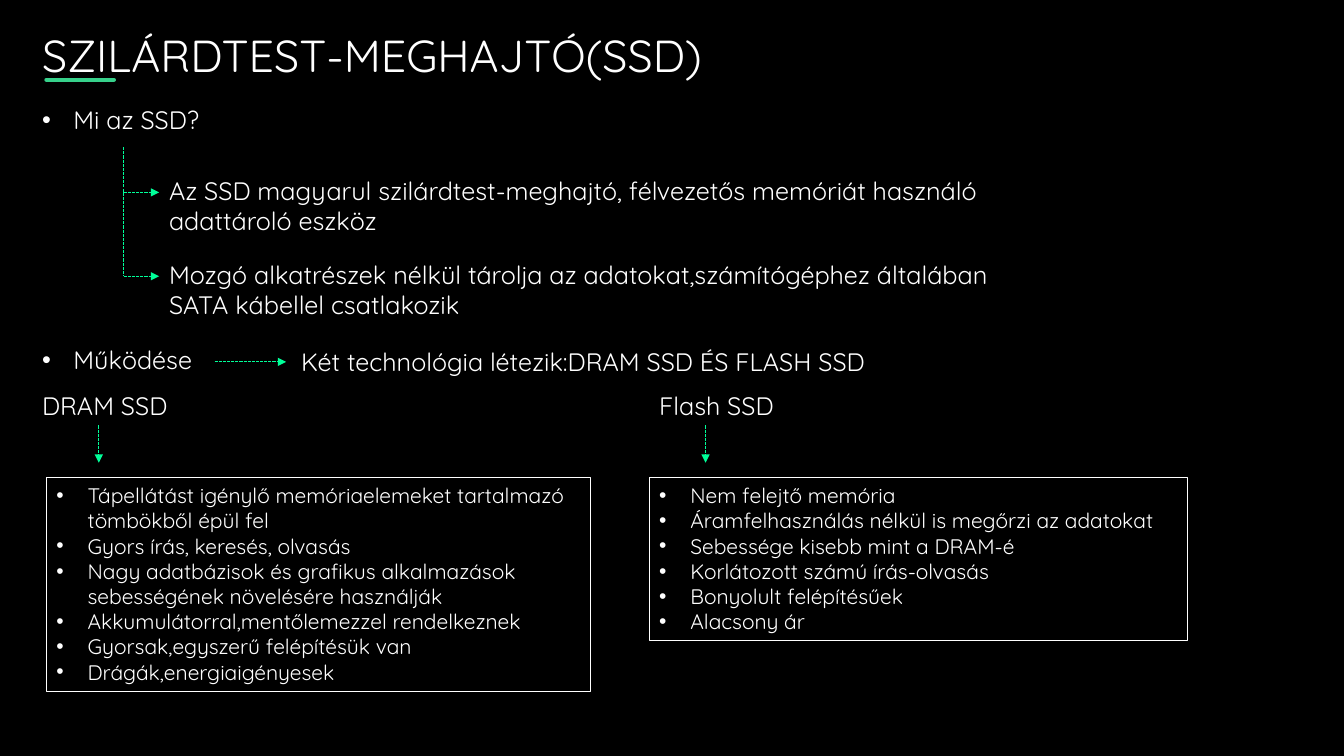
from lxml.etree import SubElement
from pptx import Presentation
from pptx.dml.color import RGBColor
from pptx.enum.dml import MSO_LINE_DASH_STYLE as Dash
from pptx.enum.shapes import MSO_CONNECTOR as Connector, MSO_SHAPE as Shape
from pptx.enum.text import MSO_ANCHOR as Anchor, MSO_AUTO_SIZE as AutoSize, PP_ALIGN as Align
from pptx.oxml.ns import qn
from pptx.util import Cm, Pt

BLACK = RGBColor(0x00, 0x00, 0x00)
WHITE = RGBColor(0xFF, 0xFF, 0xFF)
GREEN = RGBColor(0x37, 0xD1, 0x8B)
NEON = RGBColor(0x00, 0xFF, 0x99)
FONT = "Quicksand"
INDENT = Cm(0.79)
BRANCH_X, TEXT_X = 3.12, 4.01

ANSWERS = [
    (4.29, ["Az SSD magyarul szilárdtest-meghajtó, félvezetős memóriát használó adattároló eszköz"]),
    (6.4, ["Mozgó alkatrészek nélkül tárolja az adatokat,számítógéphez általában",
           "SATA kábellel csatlakozik"]),
]
DRAM_POINTS = [
    "Tápellátást igénylő memóriaelemeket tartalmazó tömbökből épül fel",
    "Gyors írás, keresés, olvasás",
    "Nagy adatbázisok és grafikus alkalmazások sebességének növelésére használják",
    "Akkumulátorral,mentőlemezzel rendelkeznek",
    "Gyorsak,egyszerű felépítésük van",
    "Drágák,energiaigényesek",
]
FLASH_POINTS = [
    "Nem felejtő memória",
    "Áramfelhasználás nélkül is megőrzi az adatokat",
    "Sebessége kisebb mint a DRAM-é",
    "Korlátozott számú írás-olvasás",
    "Bonyolult felépítésűek",
    "Alacsony ár",
]


def write_text(frame, lines, size=18, bullet=False, anchor=Anchor.TOP, auto_size=AutoSize.SHAPE_TO_FIT_TEXT):
    """Fill a text frame with one formatted paragraph per line."""
    frame.word_wrap = True
    frame.auto_size = auto_size
    frame.vertical_anchor = anchor
    for index, line in enumerate(lines):
        paragraph = frame.add_paragraph() if index else frame.paragraphs[0]
        paragraph.alignment = Align.LEFT
        run = paragraph.add_run()
        run.text = line
        run.font.name = FONT
        run.font.size = Pt(size)
        run.font.color.rgb = WHITE
        if bullet:
            properties = paragraph._p.get_or_add_pPr()
            properties.set("marL", str(INDENT))
            properties.set("indent", str(-INDENT))
            SubElement(properties, qn("a:buFont"), typeface="Arial")
            SubElement(properties, qn("a:buChar"), char="•")


def add_label(slide, left, top, width, lines, height=1.02, bullet=False):
    """Add a plain text box."""
    box = slide.shapes.add_textbox(Cm(left), Cm(top), Cm(width), Cm(height))
    write_text(box.text_frame, lines, bullet=bullet)


def add_line(slide, start, end, color=NEON, width=0.75, dashed=True, arrow=True):
    """Draw a straight line, dashed and with an arrowhead by default."""
    line = slide.shapes.add_connector(Connector.STRAIGHT, *map(Cm, start + end))
    line.line.color.rgb = color
    line.line.width = Pt(width)
    outline = line.line._get_or_add_ln()
    if dashed:
        line.line.dash_style = Dash.SQUARE_DOT
    else:
        outline.set("cap", "rnd")
    if arrow:
        SubElement(outline, qn("a:tailEnd"), type="triangle")
    SubElement(line._element.spPr, qn("a:effectLst"))


def add_technology(slide, name, label_x, arrow_x, box_x, width, height, points):
    """Add a technology name, an arrow down and a framed list of its traits."""
    add_label(slide, label_x, 9.7, 6.78, [name])
    add_line(slide, (arrow_x, 10.72), (arrow_x, 11.66))
    box = slide.shapes.add_shape(Shape.RECTANGLE, Cm(box_x), Cm(12.04), Cm(width), Cm(height))
    box.shadow.inherit = False
    box.fill.background()
    box.line.color.rgb = WHITE
    box.line.width = Pt(0.75)
    write_text(box.text_frame, points, size=15, bullet=True)


def add_title(slide, text):
    """Place and format the title with its green underline."""
    title = slide.shapes.title
    title.left, title.top, title.width, title.height = map(Cm, (0.81, -1.27, 27.51, 5.28))
    write_text(title.text_frame, [text], size=32, anchor=Anchor.MIDDLE, auto_size=AutoSize.NONE)
    add_line(slide, (1.17, 2.01), (2.87, 2.01), color=GREEN, width=3, dashed=False, arrow=False)


def add_answers(slide):
    """Add the answers, each reached by a branch of the dashed tree."""
    branch_top = 3.71
    for top, lines in ANSWERS:
        branch_y = top + 0.56
        add_line(slide, (BRANCH_X, branch_top), (BRANCH_X, branch_y), arrow=False)
        add_line(slide, (BRANCH_X, branch_y), (TEXT_X, branch_y))
        add_label(slide, TEXT_X, top, 22.23, lines, height=1.8)
        branch_top = branch_y


def main():
    """Build the slide and save it."""
    presentation = Presentation()
    presentation.slide_width, presentation.slide_height = Cm(33.87), Cm(19.05)
    slide = presentation.slides.add_slide(presentation.slide_layouts.get_by_name("Title Only"))
    slide.background.fill.solid()
    slide.background.fill.fore_color.rgb = BLACK

    add_title(slide, "SZILÁRDTEST-MEGHAJTÓ(SSD)")
    add_label(slide, 0.81, 2.51, 6.76, ["Mi az SSD?"], bullet=True)
    add_answers(slide)
    add_label(slide, 0.81, 8.56, 6.76, ["Működése"], bullet=True)
    add_line(slide, (5.41, 9.12), (7.21, 9.12))
    add_label(slide, 7.34, 8.61, 26.52, ["Két technológia létezik:DRAM SSD ÉS FLASH SSD"])
    add_technology(slide, "DRAM SSD", 0.81, 2.49, 1.17, 13.72, 5.38, DRAM_POINTS)
    add_technology(slide, "Flash SSD", 16.36, 17.78, 16.36, 13.56, 4.11, FLASH_POINTS)
    presentation.save("out.pptx")


if __name__ == "__main__":
    main()
